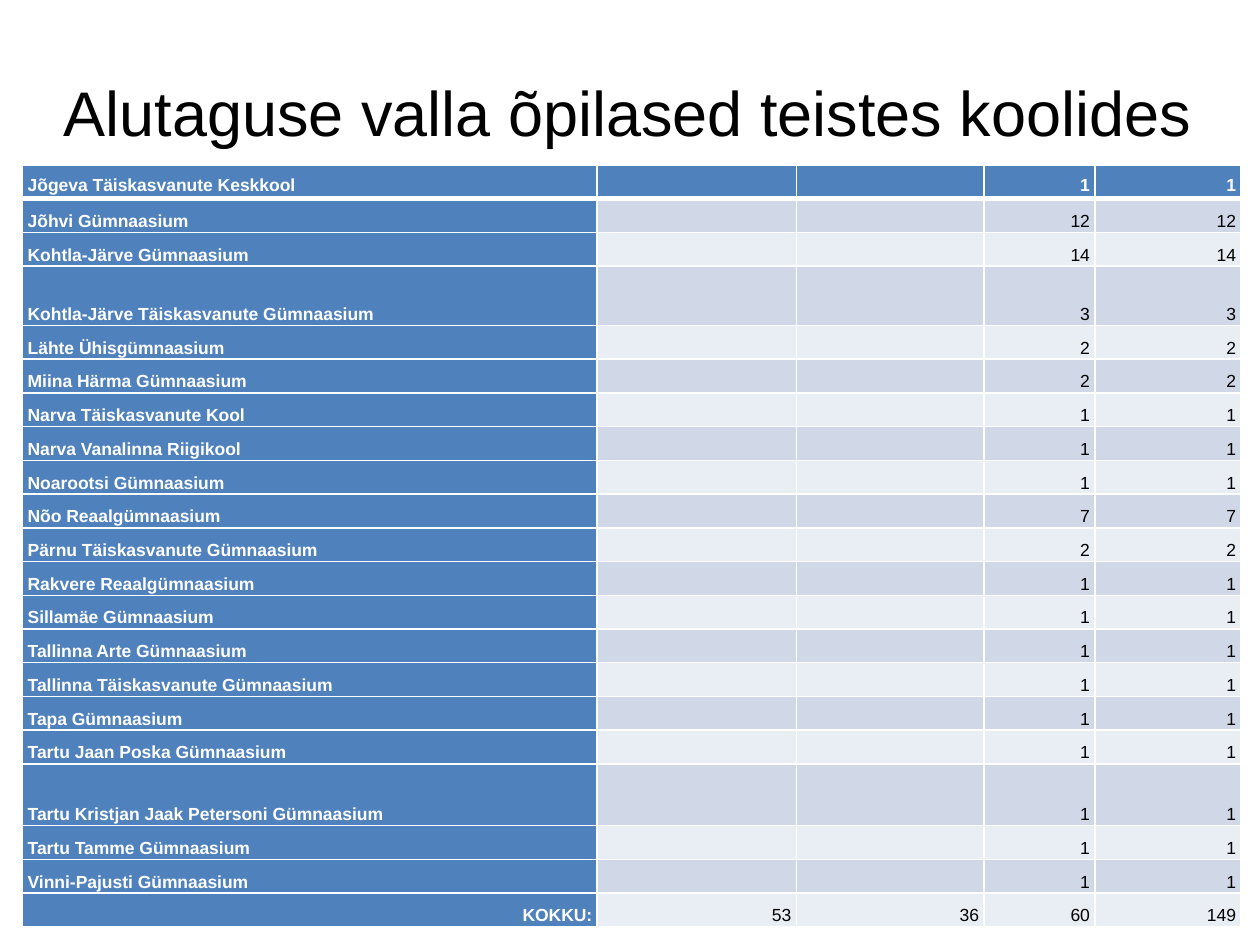
from lxml import etree
from pptx import Presentation
from pptx.dml.color import RGBColor
from pptx.enum.text import MSO_ANCHOR, PP_ALIGN
from pptx.oxml.ns import qn
from pptx.util import Inches, Pt

BOTTOM, MIDDLE = MSO_ANCHOR.BOTTOM, MSO_ANCHOR.MIDDLE
LEFT, CENTER, RIGHT = PP_ALIGN.LEFT, PP_ALIGN.CENTER, PP_ALIGN.RIGHT

WHITE = RGBColor(0xFF, 0xFF, 0xFF)
BLACK = RGBColor(0x00, 0x00, 0x00)
BLUE = RGBColor(0x4F, 0x81, 0xBD)
DARK_BAND = RGBColor(0xD0, 0xD8, 0xE8)
LIGHT_BAND = RGBColor(0xE9, 0xED, 0xF4)

FONT = "Arial"
CELL_SIZE = Pt(10)
COLUMN_WIDTHS = [4.56, 1.58, 1.49, 0.88, 1.16]
TALL_ROWS = {3: 0.47, 17: 0.49}
THIN, THICK = 1, 3

SCHOOLS = [
    ("Jõgeva Täiskasvanute Keskkool", 1),
    ("Jõhvi Gümnaasium", 12),
    ("Kohtla-Järve Gümnaasium", 14),
    ("Kohtla-Järve Täiskasvanute Gümnaasium", 3),
    ("Lähte Ühisgümnaasium", 2),
    ("Miina Härma Gümnaasium", 2),
    ("Narva Täiskasvanute Kool", 1),
    ("Narva Vanalinna Riigikool", 1),
    ("Noarootsi Gümnaasium", 1),
    ("Nõo Reaalgümnaasium", 7),
    ("Pärnu Täiskasvanute Gümnaasium", 2),
    ("Rakvere Reaalgümnaasium", 1),
    ("Sillamäe Gümnaasium", 1),
    ("Tallinna Arte Gümnaasium", 1),
    ("Tallinna Täiskasvanute Gümnaasium", 1),
    ("Tapa Gümnaasium", 1),
    ("Tartu Jaan Poska Gümnaasium", 1),
    ("Tartu Kristjan Jaak Petersoni Gümnaasium", 1),
    ("Tartu Tamme Gümnaasium", 1),
    ("Vinni-Pajusti Gümnaasium", 1),
]
TOTALS = ("KOKKU:", 53, 36, 60, 149)


def place_title(slide, left, top, width, height):
    title = slide.shapes.title
    title.left, title.top = Inches(left), Inches(top)
    title.width, title.height = Inches(width), Inches(height)
    frame = title.text_frame
    frame.text = "Alutaguse valla õpilased teistes koolides"
    frame.word_wrap = False
    frame.vertical_anchor = MIDDLE
    frame.margin_left = frame.margin_right = 0
    frame.margin_top = frame.margin_bottom = 0
    paragraph = frame.paragraphs[0]
    paragraph.alignment = CENTER
    paragraph.line_spacing = 0.9
    font = paragraph.runs[0].font
    font.name, font.size, font.color.rgb = FONT, Pt(36), BLACK


def set_borders(cell, top, bottom):
    """Draw white borders and keep the text clear of the bottom one.

    Widths are in points.
    """
    cell.margin_bottom = Pt(bottom * 0.75)
    properties = cell._tc.get_or_add_tcPr()
    sides = [("a:lnL", THIN), ("a:lnR", THIN), ("a:lnT", top), ("a:lnB", bottom)]
    for index, (tag, width) in enumerate(sides):
        line = etree.Element(qn(tag), w=str(Pt(width)))
        fill = etree.SubElement(line, qn("a:solidFill"))
        etree.SubElement(fill, qn("a:srgbClr"), val=str(WHITE))
        properties.insert(index, line)


def fill_cell(cell, content, fill, color, bold, alignment):
    cell.fill.solid()
    cell.fill.fore_color.rgb = fill
    cell.vertical_anchor = BOTTOM
    cell.margin_left = cell.margin_right = Inches(0.04)
    cell.margin_top = 0
    paragraph = cell.text_frame.paragraphs[0]
    if content == "":
        # An empty cell takes its line height from the paragraph end mark.
        etree.SubElement(paragraph._p, qn("a:endParaRPr"),
                         sz=str(int(CELL_SIZE.pt * 100)))
        return
    paragraph.text = str(content)
    paragraph.alignment = alignment
    paragraph.line_spacing = 1.07
    font = paragraph.runs[0].font
    font.name, font.size, font.bold = FONT, CELL_SIZE, bold
    font.color.rgb = color


def place_school_table(slide, left, top, width, height):
    rows = [(name, "", "", count, count) for name, count in SCHOOLS] + [TOTALS]
    table = slide.shapes.add_table(
        len(rows), len(COLUMN_WIDTHS),
        Inches(left), Inches(top), Inches(width), Inches(height)).table
    for column, column_width in zip(table.columns, COLUMN_WIDTHS):
        column.width = Inches(column_width)

    plain_height = ((height - sum(TALL_ROWS.values()))
                    / (len(rows) - len(TALL_ROWS)))
    for r, values in enumerate(rows):
        table.rows[r].height = Inches(TALL_ROWS.get(r, plain_height))
        band = DARK_BAND if r % 2 else LIGHT_BAND
        for c, content in enumerate(values):
            cell = table.cell(r, c)
            heading = r == 0 or c == 0
            is_name = c == 0 and values is not TOTALS
            fill_cell(cell, content,
                      fill=BLUE if heading else band,
                      color=WHITE if heading else BLACK,
                      bold=heading,
                      alignment=LEFT if is_name else RIGHT)
            set_borders(cell,
                        top=THICK if r == 1 else THIN,
                        bottom=THICK if r == 0 else THIN)


def main():
    presentation = Presentation()
    presentation.slide_width = Inches(10)
    presentation.slide_height = Inches(7.5)
    slide = presentation.slides.add_slide(presentation.slide_layouts[5])
    place_title(slide, 0.48, 0.14, 9, 1.57)
    place_school_table(slide, 0.18, 1.31, 9.67, 6.05)
    presentation.save("out.pptx")


if __name__ == "__main__":
    main()
